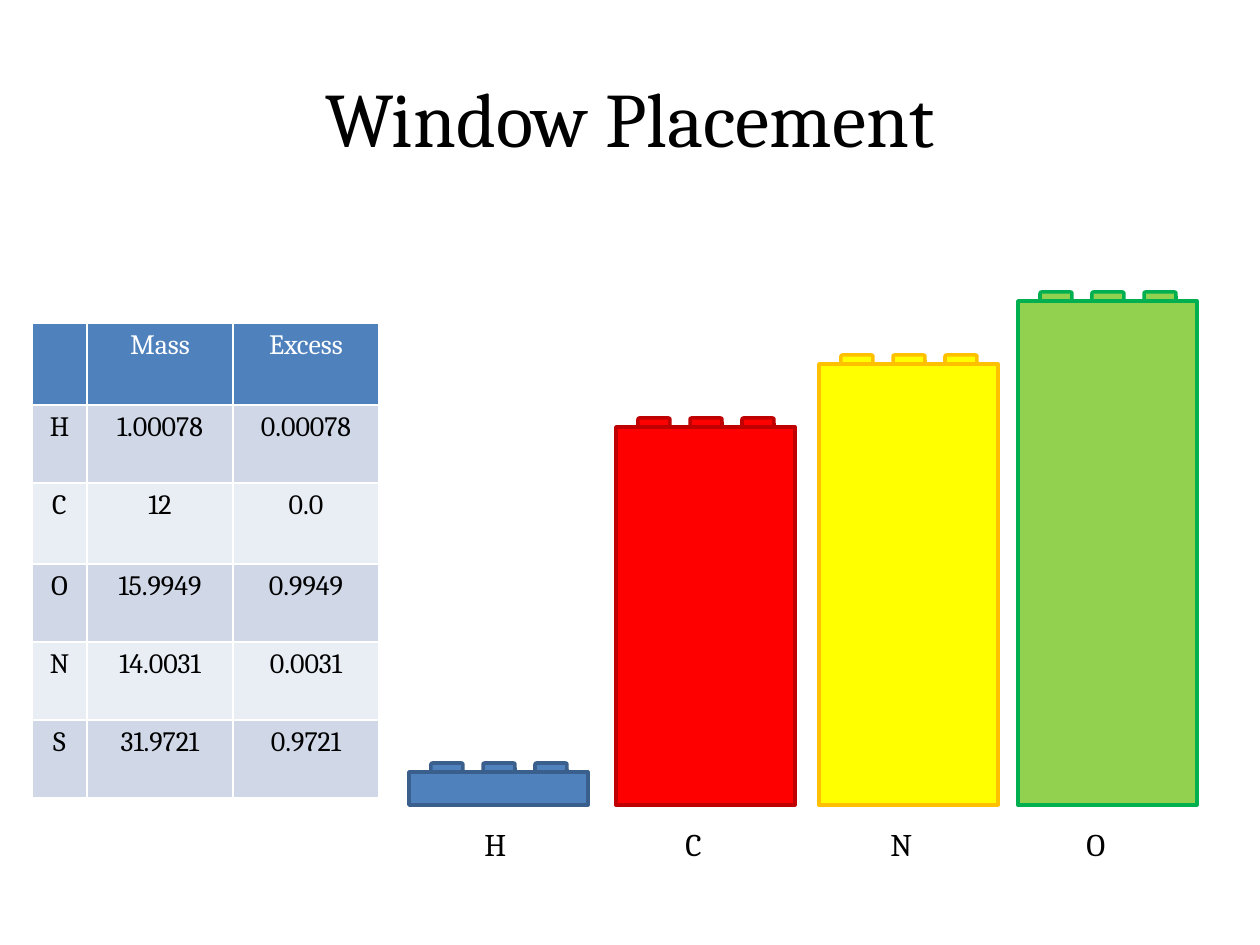
from lxml import etree
from pptx import Presentation
from pptx.dml.color import RGBColor
from pptx.enum.shapes import MSO_SHAPE
from pptx.enum.text import MSO_ANCHOR, PP_ALIGN
from pptx.oxml.ns import qn
from pptx.util import Pt

EMU_PER_PX = 914400 / 126
FONT = "Cambria"
BLACK, WHITE, BLUE = "000000", "FFFFFF", "4F81BD"
BAND_COLORS = ("E9EDF4", "D0D8E8")
RECTANGLE = MSO_SHAPE.RECTANGLE
ROUNDED = MSO_SHAPE.ROUNDED_RECTANGLE
LEFT, CENTER = PP_ALIGN.LEFT, PP_ALIGN.CENTER
TOP, MIDDLE = MSO_ANCHOR.TOP, MSO_ANCHOR.MIDDLE

BASELINE = 805
BRICK_WIDTH = 179
STUD_WIDTH, STUD_HEIGHT, STUD_INSET, STUD_STEP = 32, 9, 22, 52

BRICKS = [
    (409, 33, BLUE, "3A5F8C"),
    (616, 378, "FF0000", "C00000"),
    (1018, 504, "92D050", "00B050"),
    (819, 441, "FFFF00", "FFC000"),
]
LABELS = [("H", 472, 52), ("C", 673, 45), ("N", 878, 49), ("O", 1074, 49)]
COLUMN_WIDTHS = [55, 146, 146]
ROW_HEIGHTS = [82, 78, 81, 78, 78, 78]
MASSES = [
    ("", "Mass", "Excess"),
    ("H", "1.00078", "0.00078"),
    ("C", "12", "0.0"),
    ("O", "15.9949", "0.9949"),
    ("N", "14.0031", "0.0031"),
    ("S", "31.9721", "0.9721"),
]


def px(value):
    return round(value * EMU_PER_PX)


def rgb(color):
    return RGBColor.from_string(color)


def box(left, top, width, height):
    return [px(value) for value in (left, top, width, height)]


def write(text_frame, text, size, color, alignment):
    paragraph = text_frame.paragraphs[0]
    paragraph.alignment = alignment
    run = paragraph.add_run()
    run.text = text
    font_format = {"name": FONT, "size": Pt(size)}
    for name, value in font_format.items():
        setattr(run.font, name, value)
    run.font.color.rgb = rgb(color)


def add_text(slide, place, text, size, alignment=LEFT, wrap=False, anchor=TOP):
    text_frame = slide.shapes.add_textbox(*box(*place)).text_frame
    frame_format = {"word_wrap": wrap, "vertical_anchor": anchor}
    for name, value in frame_format.items():
        setattr(text_frame, name, value)
    write(text_frame, text, size, BLACK, alignment)


def add_block(group, kind, place, fill, line):
    shape = group.shapes.add_shape(kind, *box(*place))
    shape.shadow.inherit = False
    shape.fill.solid()
    shape.fill.fore_color.rgb = rgb(fill)
    shape.line.color.rgb = rgb(line)
    shape.line.width = Pt(2)


def add_brick(slide, left, height, fill, line):
    group = slide.shapes.add_group_shape()
    top = BASELINE - height
    add_block(group, RECTANGLE, (left, top, BRICK_WIDTH, height), fill, line)
    for index in range(3):
        stud_left = left + STUD_INSET + index * STUD_STEP
        place = (stud_left, top - STUD_HEIGHT, STUD_WIDTH, STUD_HEIGHT)
        add_block(group, ROUNDED, place, fill, line)


def add_borders(cell):
    properties = cell._tc.get_or_add_tcPr()
    for side in ("lnL", "lnR", "lnT", "lnB"):
        border = etree.SubElement(properties, qn(f"a:{side}"), w=str(Pt(1)))
        fill = etree.SubElement(border, qn("a:solidFill"))
        etree.SubElement(fill, qn("a:srgbClr"), val=WHITE)


def add_mass_table(slide):
    place = box(32, 323, sum(COLUMN_WIDTHS), sum(ROW_HEIGHTS))
    table = slide.shapes.add_table(len(MASSES), len(COLUMN_WIDTHS), *place).table
    for column, width in zip(table.columns, COLUMN_WIDTHS):
        column.width = px(width)
    for row_index, (row, height, values) in enumerate(zip(table.rows, ROW_HEIGHTS, MASSES)):
        row.height = px(height)
        is_header = row_index == 0
        for cell, value in zip(row.cells, values):
            add_borders(cell)
            cell.fill.solid()
            cell.fill.fore_color.rgb = rgb(BLUE if is_header else BAND_COLORS[row_index % 2])
            if value:
                write(cell.text_frame, value, 16, WHITE if is_header else BLACK, CENTER)
    table.first_row = False
    table.horz_banding = False


def main():
    presentation = Presentation()
    presentation.slide_width = px(1260)
    presentation.slide_height = px(945)
    slide = presentation.slides.add_slide(presentation.slide_layouts[6])
    add_text(slide, (63, 38, 1134, 157), "Window Placement", 44, CENTER, True, MIDDLE)
    add_mass_table(slide)
    for brick in BRICKS:
        add_brick(slide, *brick)
    for text, left, width in LABELS:
        add_text(slide, (left, 819, width, 50), text, 18)
    presentation.save("out.pptx")


if __name__ == "__main__":
    main()
